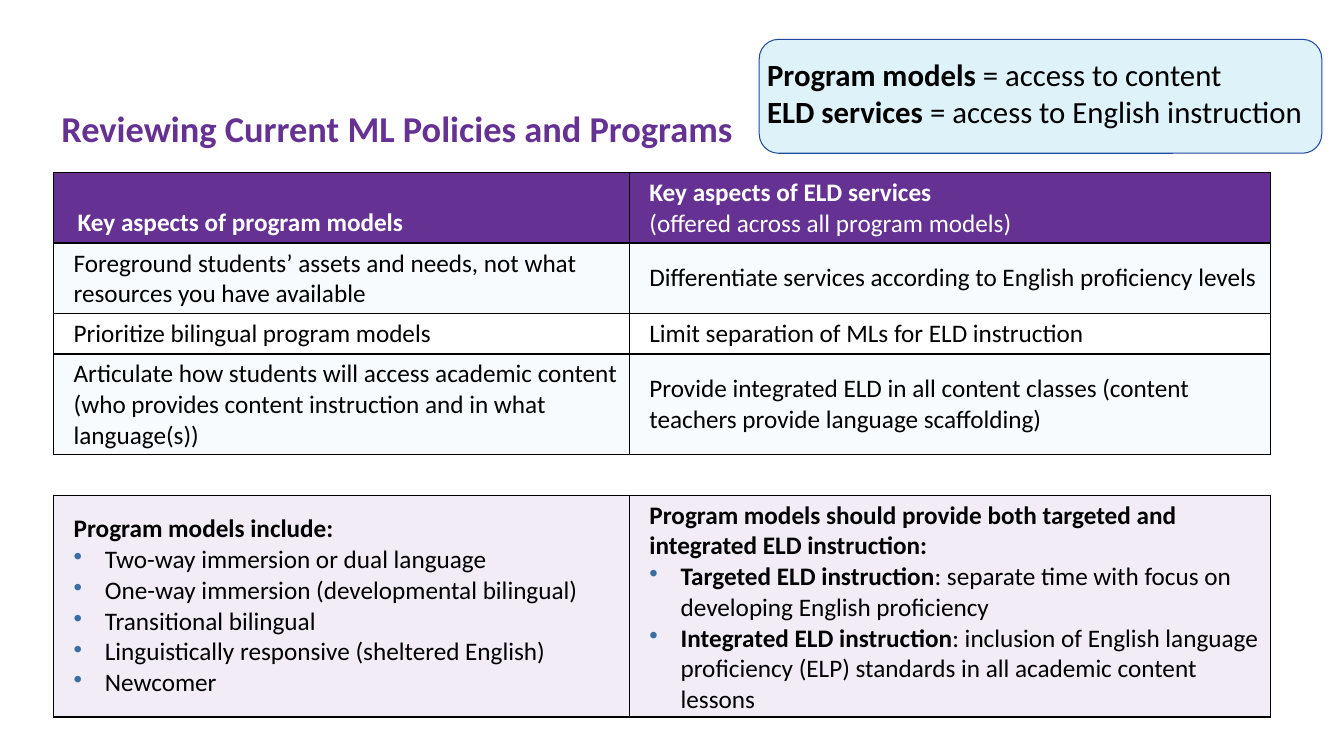
from lxml.etree import SubElement
from pptx import Presentation
from pptx.dml.color import RGBColor
from pptx.enum.shapes import MSO_SHAPE
from pptx.enum.text import MSO_ANCHOR
from pptx.oxml.ns import qn
from pptx.util import Inches, Pt

PURPLE = RGBColor(0x65, 0x32, 0x93)
SKY = RGBColor(0xA8, 0xDC, 0xF2)
PALE_BLUE = RGBColor(0xDE, 0xF2, 0xFA)
NAVY = RGBColor(0x20, 0x49, 0x9F)
BULLET_BLUE = RGBColor(0x38, 0x6E, 0xA4)
WHITE = RGBColor(0xFF, 0xFF, 0xFF)
BLACK = RGBColor(0x00, 0x00, 0x00)

TINT = 9  # opacity of the pale rows, in percent
BULLET = "• "

# Text between double asterisks is bold; a leading bullet makes a list item.
# Each row: height in percent, fill, opacity, lines of the two cells.
ROWS = [
    (9.2, PURPLE, 100,
     ["**Key aspects of program models**"],
     ["**Key aspects of ELD services**", "(offered across all program models)"]),
    (9.2, SKY, TINT,
     ["Foreground students’ assets and needs, not what resources you have available"],
     ["Differentiate services according to English proficiency levels"]),
    (5.2, WHITE, 100,
     ["Prioritize bilingual program models"],
     ["Limit separation of MLs for ELD instruction"]),
    (13.07, SKY, TINT,
     ["Articulate how students will access academic content "
      "(who provides content instruction and in what language(s))"],
     ["Provide integrated ELD in all content classes "
      "(content teachers provide language scaffolding)"]),
    (5.2, WHITE, TINT, [], []),
    (28.8, PURPLE, TINT,
     ["**Program models include:**",
      "• Two-way immersion or dual language",
      "• One-way immersion (developmental bilingual)",
      "• Transitional bilingual",
      "• Linguistically responsive (sheltered English)",
      "• Newcomer"],
     ["**Program models should provide both targeted and integrated ELD instruction:**",
      "• **Targeted ELD instruction**: separate time with focus on "
      "developing English proficiency",
      "• **Integrated ELD instruction**: inclusion of English language "
      "proficiency (ELP) standards in all academic content lessons"]),
]


class SlideBuilder:
    """Adds styled elements to one slide; lengths are percent of its size."""

    font_name = "Calibri"
    bullet_indent = Inches(0.31)

    def __init__(self, deck):
        self.deck = deck
        self.slide = deck.slides.add_slide(deck.slide_layouts[6])

    def across(self, share):
        return round(self.deck.slide_width * share / 100)

    def down(self, share):
        return round(self.deck.slide_height * share / 100)

    def area(self, left, top, width, height):
        return self.across(left), self.down(top), self.across(width), self.down(height)

    def fill_frame(self, frame, lines, size, color, spacing=None):
        for index, line in enumerate(lines):
            paragraph = frame.paragraphs[0] if index == 0 else frame.add_paragraph()
            if line.startswith(BULLET):
                self.make_list_item(paragraph)
            paragraph.line_spacing = spacing
            paragraph.font.name = self.font_name
            paragraph.font.size = Pt(size)
            paragraph.font.color.rgb = color
            pieces = line.removeprefix(BULLET).split("**")
            for position, piece in enumerate(pieces):
                if piece:
                    run = paragraph.add_run()
                    run.text = piece
                    run.font.bold = position % 2 == 1

    def make_list_item(self, paragraph):
        properties = paragraph._p.get_or_add_pPr()
        properties.set("marL", str(self.bullet_indent))
        properties.set("indent", str(-self.bullet_indent))
        bullet_color = SubElement(properties, qn("a:buClr"))
        SubElement(bullet_color, qn("a:srgbClr"), val=str(BULLET_BLUE))
        SubElement(properties, qn("a:buChar"), char=BULLET.strip())

    def text(self, area, lines, size, color, anchor=MSO_ANCHOR.TOP, inset=0.05, spacing=None):
        frame = self.slide.shapes.add_textbox(*self.area(*area)).text_frame
        frame.word_wrap = True
        frame.vertical_anchor = anchor
        frame.margin_top = frame.margin_bottom = Inches(inset)
        self.fill_frame(frame, lines, size, color, spacing)

    def panel(self, area, fill, line):
        panel = self.slide.shapes.add_shape(MSO_SHAPE.ROUNDED_RECTANGLE, *self.area(*area))
        panel.adjustments[0] = 0.17
        panel.shadow.inherit = False
        panel.fill.solid()
        panel.fill.fore_color.rgb = fill
        panel.line.color.rgb = line
        panel.line.width = Pt(0.75)

    def style_cell(self, cell, fill, opacity, closed_sides):
        properties = cell._tc.get_or_add_tcPr()
        for side in "LRTB":
            border = SubElement(properties, qn(f"a:ln{side}"), w=str(Pt(1)))
            if side in "TB" or closed_sides:
                solid = SubElement(border, qn("a:solidFill"))
                SubElement(solid, qn("a:srgbClr"), val=str(BLACK))
            else:
                SubElement(border, qn("a:noFill"))
        cell.fill.solid()
        cell.fill.fore_color.rgb = fill
        if opacity < 100:
            tone = properties.find(qn("a:solidFill")).find(qn("a:srgbClr"))
            SubElement(tone, qn("a:alpha"), val=str(opacity * 1000))

    def table(self, left, top, column_widths, rows, size):
        area = self.area(left, top, sum(column_widths), sum(row[0] for row in rows))
        table = self.slide.shapes.add_table(len(rows), len(column_widths), *area).table
        table.first_row = table.horz_banding = False
        for column, width in zip(table.columns, column_widths):
            column.width = self.across(width)
        for index, (height, fill, opacity, *contents) in enumerate(rows):
            table.rows[index].height = self.down(height)
            is_header = index == 0
            for cell, lines in zip(table.rows[index].cells, contents):
                cell.margin_left = Inches(0.2)
                cell.vertical_anchor = MSO_ANCHOR.BOTTOM if is_header else MSO_ANCHOR.MIDDLE
                self.style_cell(cell, fill, opacity, closed_sides=bool(lines))
                self.fill_frame(cell.text_frame, lines, size, WHITE if is_header else BLACK)
        table.cell(0, 0).margin_left = Inches(0.24)


def main():
    deck = Presentation()
    deck.slide_width, deck.slide_height = Inches(13.33), Inches(7.5)
    builder = SlideBuilder(deck)
    builder.text((3.83, 10.67, 92.35, 13.33),
                 ["**Reviewing Current ML Policies and Programs**"],
                 26, PURPLE, MSO_ANCHOR.MIDDLE, spacing=0.9)
    builder.table(3.98, 22.8, (42.84, 47.71), ROWS, 18)
    builder.panel((56.49, 5.2, 41.86, 15.07), PALE_BLUE, NAVY)
    builder.text((56.34, 6, 43.14, 12.53),
                 ["**Program models** = access to content",
                  "**ELD services** = access to English instruction"],
                 22, BLACK, inset=0.1)
    deck.save("out.pptx")


if __name__ == "__main__":
    main()
